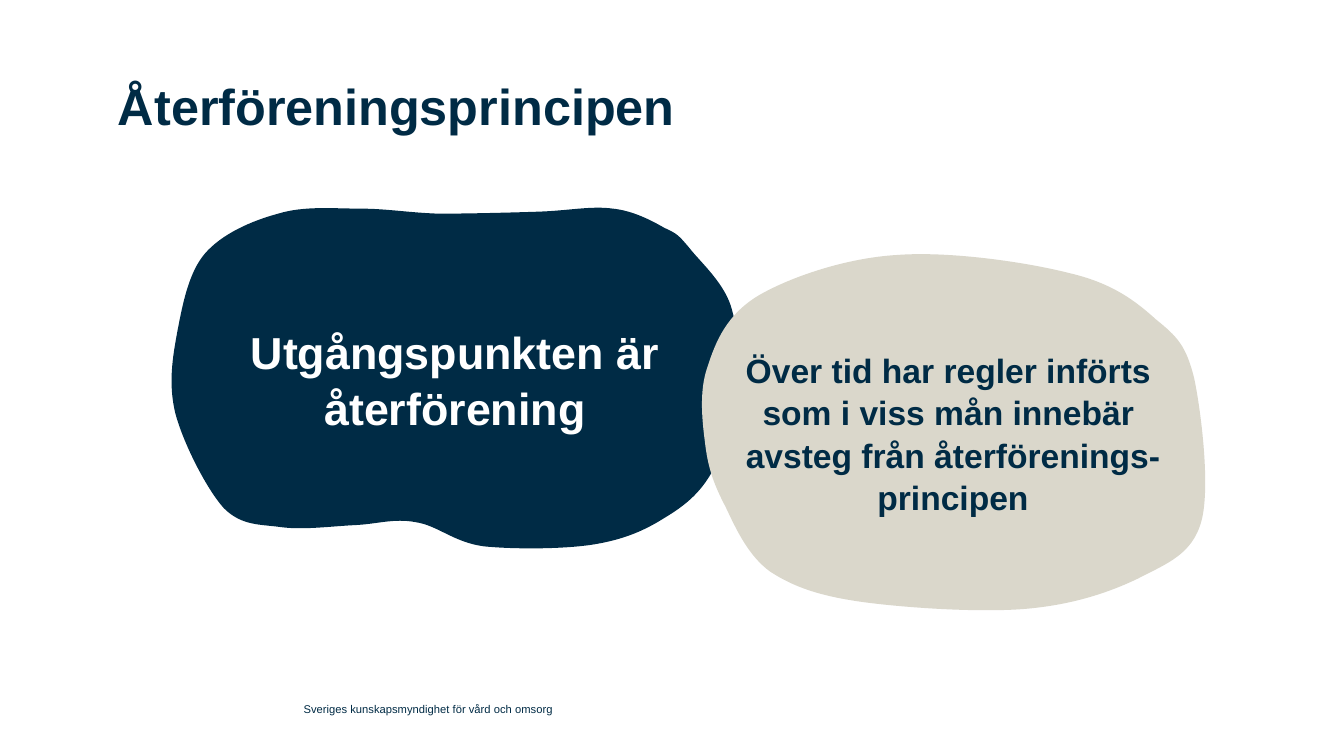
from dataclasses import dataclass

from lxml import etree
from pptx import Presentation
from pptx.dml.color import RGBColor
from pptx.enum.text import MSO_ANCHOR, PP_ALIGN
from pptx.oxml.ns import qn
from pptx.util import Cm, Pt

TOP, MIDDLE = MSO_ANCHOR.TOP, MSO_ANCHOR.MIDDLE
LEFT, CENTER = PP_ALIGN.LEFT, PP_ALIGN.CENTER


@dataclass(frozen=True)
class Theme:
    font: str = "Arial"
    navy: RGBColor = RGBColor(0x00, 0x2B, 0x45)
    sand: RGBColor = RGBColor(0xDA, 0xD7, 0xCB)
    white: RGBColor = RGBColor(0xFF, 0xFF, 0xFF)
    title: Pt = Pt(36)
    main: Pt = Pt(32)
    side: Pt = Pt(24)
    footer: Pt = Pt(8)


THEME = Theme()
UNIT = Cm(2.54) / 100  # outline points are hundredths of an inch


def write(shape, text, size, color, bold=True, align=LEFT, anchor=MIDDLE, inset=None):
    frame = shape.text_frame
    frame.text = text
    frame.word_wrap = True
    frame.vertical_anchor = anchor
    if inset is not None:
        frame.margin_left = frame.margin_right = inset
        frame.margin_top = frame.margin_bottom = inset
    para = frame.paragraphs[0]
    para.alignment = align
    para.font.name = THEME.font
    para.font.size = size
    para.font.bold = bold
    para.font.color.rgb = color
    return para


def add_blob(page, bounds, points, fill):
    """Draw a closed outline: a start point, then three points per curve."""
    left, top, width, height = bounds
    right, bottom = left + width, top + height
    builder = page.shapes.build_freeform(left, top, scale=UNIT)
    builder.add_line_segments([(right, top), (right, bottom), (left, bottom)])
    blob = builder.convert_to_shape()
    blob.shadow.inherit = False
    blob.fill.solid()
    blob.fill.fore_color.rgb = fill
    blob.line.fill.background()

    # Replace the straight frame with Bézier curves
    outline = blob.element.find(".//" + qn("a:path"))
    for child in list(outline):
        outline.remove(child)
    steps = [("a:moveTo", points[:1])]
    steps += [("a:cubicBezTo", points[i:i + 3]) for i in range(1, len(points), 3)]
    for tag, step_points in steps:
        step = etree.SubElement(outline, qn(tag))
        for x, y in step_points:
            etree.SubElement(step, qn("a:pt"), x=str(x - left), y=str(y - top))
    etree.SubElement(outline, qn("a:close"))
    return blob


# Deck and page
deck = Presentation()
deck.slide_width, deck.slide_height = Cm(33.87), Cm(19.05)
page = deck.slides.add_slide(deck.slide_layouts[5])

# Title
title = page.shapes.title
title.left, title.top, title.width, title.height = Cm(2.97), Cm(1.9), Cm(25.76), Cm(2.39)
write(title, "Återföreningsprincipen", THEME.title, THEME.navy, anchor=TOP, inset=0)

# Two overlapping blobs
main_outline = [
    (222, 504),
    (240, 522), (258, 520), (279, 523), (301, 526), (330, 522), (352, 521),
    (374, 520), (391, 514), (412, 518), (434, 521), (450, 538), (480, 542),
    (509, 545), (560, 545), (590, 540), (620, 535), (640, 526), (659, 514),
    (679, 502), (694, 490), (706, 469), (718, 449), (729, 419), (732, 391),
    (735, 364), (733, 328), (725, 303), (717, 279), (694, 259), (684, 246),
    (673, 233), (672, 232), (659, 226), (647, 219), (628, 209), (608, 207),
    (587, 204), (564, 209), (535, 210), (506, 211), (464, 212), (435, 212),
    (405, 211), (384, 207), (357, 207), (331, 207), (302, 204), (276, 212),
    (250, 219), (220, 232), (203, 252), (187, 271), (181, 303), (176, 329),
    (171, 356), (167, 381), (174, 410), (182, 440), (205, 485), (222, 504),
]
side_outline = [
    (700, 443),
    (697, 420), (693, 389), (702, 364), (710, 339), (721, 312), (753, 293),
    (784, 275), (839, 256), (890, 253), (942, 249), (1018, 260), (1061, 271),
    (1104, 281), (1127, 299), (1147, 317), (1168, 334), (1177, 343), (1185, 376),
    (1192, 410), (1201, 484), (1192, 517), (1183, 550), (1158, 559), (1129, 574),
    (1100, 588), (1064, 600), (1018, 604), (972, 608), (897, 603), (854, 597),
    (812, 591), (787, 582), (764, 567), (742, 551), (730, 524), (720, 503),
    (709, 482), (703, 466), (700, 443),
]
blobs = [
    ((170, 206, 563, 338), main_outline, THEME.navy,
     "Utgångspunkten är återförening", THEME.main, THEME.white),
    ((696, 252, 499, 354), side_outline, THEME.sand,
     "Över tid har regler införts \vsom i viss mån innebär \vavsteg från återförenings-principen",
     THEME.side, THEME.navy),
]
for bounds, points, fill, text, size, color in blobs:
    blob = add_blob(page, bounds, points, fill)
    write(blob, text, size, color, align=CENTER).line_spacing = 1.05

# Footer
footer = page.shapes.add_textbox(Cm(7.65), Cm(17.5), Cm(15.01), Cm(0.74))
write(footer, "Sveriges kunskapsmyndighet för vård och omsorg", THEME.footer, THEME.navy,
      bold=False, inset=0)

deck.save("out.pptx")
